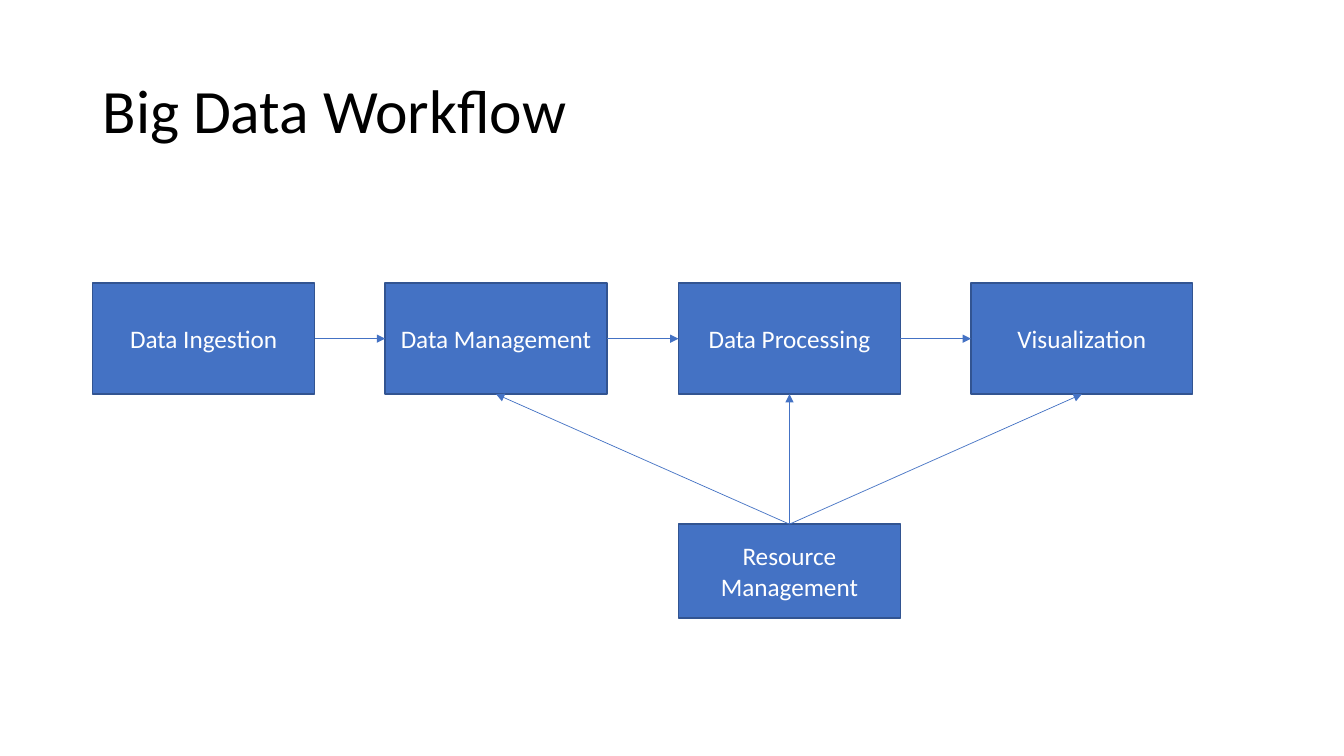
import pptx
import pptx.util
import pptx.dml.color
import pptx.enum.shapes
import pptx.enum.text
import pptx.oxml.ns
import lxml.etree

PX = 9144
THEME = {
    "font": "Calibri",
    "ink": pptx.dml.color.RGBColor.from_string("000000"),
    "label": pptx.dml.color.RGBColor.from_string("FFFFFF"),
    "blue": pptx.dml.color.RGBColor.from_string("4472C4"),
    "border": pptx.dml.color.RGBColor.from_string("325491"),
    "title_size": pptx.util.Pt(44),
    "label_size": pptx.util.Pt(18),
    "border_width": pptx.util.Pt(1),
    "arrow_width": pptx.util.Pt(0.5),
}
TOP, LEFT, BOTTOM, RIGHT = range(4)
BOX_WIDTH = 220
STAGE_LEFT, STAGE_TOP, STAGE_HEIGHT, STAGE_STEP = 92, 281, 110, 290.4
STAGES = ["Data Ingestion", "Data Management", "Data Processing", "Visualization"]


def write_text(shape, text, size, color, align, spacing):
    frame = shape.text_frame
    frame.word_wrap = True
    frame.vertical_anchor = pptx.enum.text.MSO_ANCHOR.MIDDLE
    para = frame.paragraphs[0]
    para.alignment = align
    para.line_spacing = spacing
    span = para.add_run()
    span.text = text
    for name, value in {"name": THEME["font"], "size": size}.items():
        setattr(span.font, name, value)
    span.font.color.rgb = color


deck = pptx.Presentation()
deck.slide_width = 1333 * PX
deck.slide_height = 750 * PX
page = deck.slides.add_slide(deck.slide_layouts[6])

title = page.shapes.add_textbox(92 * PX, 40 * PX, 1150 * PX, 145 * PX)
write_text(title, "Big Data Workflow", THEME["title_size"], THEME["ink"],
           pptx.enum.text.PP_ALIGN.LEFT, 0.9)

placements = [
    (label, STAGE_LEFT + round(STAGE_STEP * index), STAGE_TOP, STAGE_HEIGHT)
    for index, label in enumerate(STAGES)
]
placements.append(("Resource Management", placements[2][1], 520, 93))

boxes = []
for label, left, top, height in placements:
    box = page.shapes.add_shape(pptx.enum.shapes.MSO_SHAPE.RECTANGLE,
                                left * PX, top * PX, BOX_WIDTH * PX, height * PX)
    box.shadow.inherit = False
    box.fill.solid()
    box.fill.fore_color.rgb = THEME["blue"]
    box.line.color.rgb = THEME["border"]
    box.line.width = THEME["border_width"]
    write_text(box, label, THEME["label_size"], THEME["label"],
               pptx.enum.text.PP_ALIGN.CENTER, 1.0)
    boxes.append(box)

*stages, resources = boxes
links = [(start, RIGHT, end, LEFT) for start, end in zip(stages, stages[1:])]
links += [(resources, TOP, stage, BOTTOM) for stage in stages[1:]]

for start, start_side, end, end_side in links:
    arrow = page.shapes.add_connector(pptx.enum.shapes.MSO_CONNECTOR.STRAIGHT, 0, 0, 0, 0)
    arrow.begin_connect(start, start_side)
    arrow.end_connect(end, end_side)
    arrow.line.color.rgb = THEME["blue"]
    arrow.line.width = THEME["arrow_width"]
    properties = arrow.line._get_or_add_ln()
    lxml.etree.SubElement(properties, pptx.oxml.ns.qn("a:tailEnd"), type="triangle")
    lxml.etree.SubElement(properties.getparent(), pptx.oxml.ns.qn("a:effectLst"))

deck.save("out.pptx")
